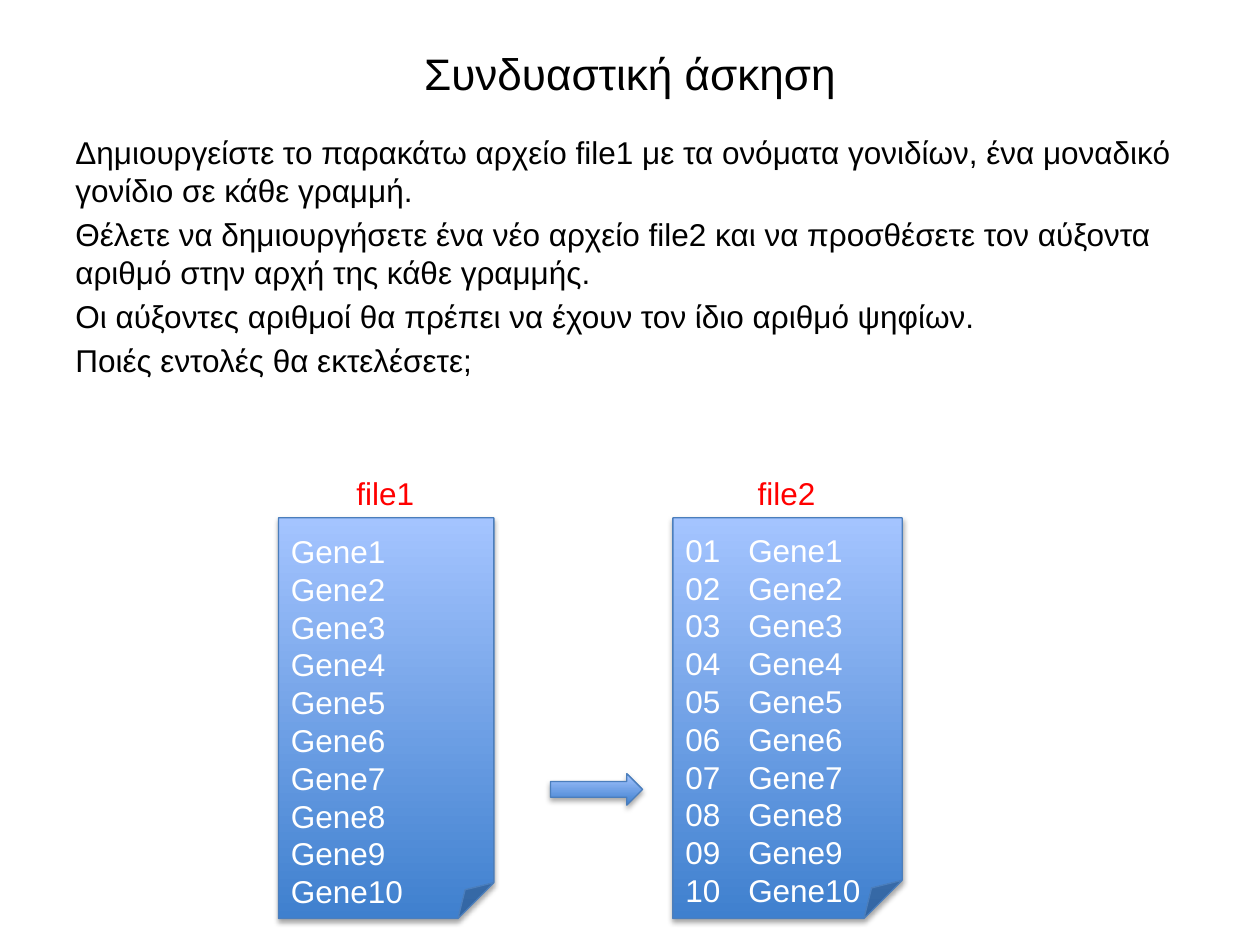
from lxml import etree
from pptx import Presentation
from pptx.dml.color import RGBColor
from pptx.enum.shapes import MSO_SHAPE as Shape
from pptx.enum.text import MSO_ANCHOR as Anchor, PP_ALIGN as Align
from pptx.oxml import parse_xml
from pptx.oxml.ns import nsdecls, qn
from pptx.util import Inches, Pt

BLACK = RGBColor(0x00, 0x00, 0x00)
WHITE = RGBColor(0xFF, 0xFF, 0xFF)
RED = RGBColor(0xFF, 0x00, 0x00)
DARK_BLUE = RGBColor(0x3F, 0x80, 0xCE)
LIGHT_BLUE = RGBColor(0xA4, 0xC4, 0xFF)
OUTLINE = RGBColor(0x4B, 0x7E, 0xBC)

SHADOW = f"""<a:outerShdw {nsdecls('a')} blurRad="39370" dist="22860" dir="5400000"
  rotWithShape="0"><a:srgbClr val="000000"><a:alpha val="35000"/></a:srgbClr></a:outerShdw>"""


def write(shape, lines, size=18, color=BLACK, align=Align.LEFT, anchor=Anchor.TOP,
          wrap=True, gap=0, tab=None):
    """Fill a shape with one paragraph per line; gap is in points, tab in inches."""
    frame = shape.text_frame
    frame.word_wrap = wrap
    frame.vertical_anchor = anchor
    for i, line in enumerate(lines):
        paragraph = frame.add_paragraph() if i else frame.paragraphs[0]
        paragraph.alignment = align
        if i and gap:
            paragraph.space_before = Pt(gap)
        if tab:
            tabs = etree.SubElement(paragraph._p.get_or_add_pPr(), qn("a:tabLst"))
            etree.SubElement(tabs, qn("a:tab"), pos=str(Inches(tab)), algn="l")
        run = paragraph.add_run()
        run.text = line
        run.font.name = "Arial"
        run.font.size = Pt(size)
        run.font.color.rgb = color


def add_blue_shape(kind, left, top, width, height):
    shape = slide.shapes.add_shape(
        kind, Inches(left), Inches(top), Inches(width), Inches(height))
    shape.fill.gradient()
    shape.fill.gradient_angle = 90
    for stop, color in zip(shape.fill.gradient_stops, (DARK_BLUE, LIGHT_BLUE)):
        stop.color.rgb = color
    shape.line.color.rgb = OUTLINE
    shape.line.width = Pt(0.75)
    shape.shadow.inherit = False
    shape._element.spPr.find(qn("a:effectLst")).append(parse_xml(SHADOW))
    return shape


prs = Presentation()
prs.slide_width, prs.slide_height = Inches(10), Inches(7.5)
slide = prs.slides.add_slide(prs.slide_layouts[6])

title = slide.shapes.add_textbox(Inches(0.5), Inches(0.3), Inches(9), Inches(0.55))
write(title, ["Συνδυαστική άσκηση"], size=25.2, align=Align.CENTER, anchor=Anchor.MIDDLE)

exercise = slide.shapes.add_textbox(Inches(0.5), Inches(1.01), Inches(9), Inches(2.41))
write(exercise, [
    "Δημιουργείστε το παρακάτω αρχείο file1 με τα ονόματα γονιδίων, "
    "ένα μοναδικό γονίδιο σε κάθε γραμμή.",
    "Θέλετε να δημιουργήσετε ένα νέο αρχείο file2 και να προσθέσετε "
    "τον αύξοντα αριθμό στην αρχή της κάθε γραμμής.",
    "Οι αύξοντες αριθμοί θα πρέπει να έχουν τον ίδιο αριθμό ψηφίων.",
    "Ποιές εντολές θα εκτελέσετε;",
], gap=3.6)

genes = [f"Gene{n}" for n in range(1, 11)]
numbered_genes = [f"{n:02}\t{gene}" for n, gene in enumerate(genes, 1)]

files = [
    ("file1", 2.21, 1.71, genes, None),
    ("file2", 5.34, 1.82, numbered_genes, 0.5),
]
for name, left, width, lines, tab in files:
    page = add_blue_shape(Shape.FOLDED_CORNER, left, 4.11, width, 3.18)
    page.text_frame.margin_top = Inches(0.33)
    page.text_frame.margin_bottom = 0
    write(page, lines, color=WHITE, align=Align.JUSTIFY, anchor=Anchor.MIDDLE, tab=tab)

    label_left = left + (width - 0.67) / 2
    label = slide.shapes.add_textbox(
        Inches(label_left), Inches(3.71), Inches(0.67), Inches(0.4))
    write(label, [name], color=RED, wrap=False)

add_blue_shape(Shape.RIGHT_ARROW, 4.37, 6.14, 0.73, 0.25)

prs.save("out.pptx")
